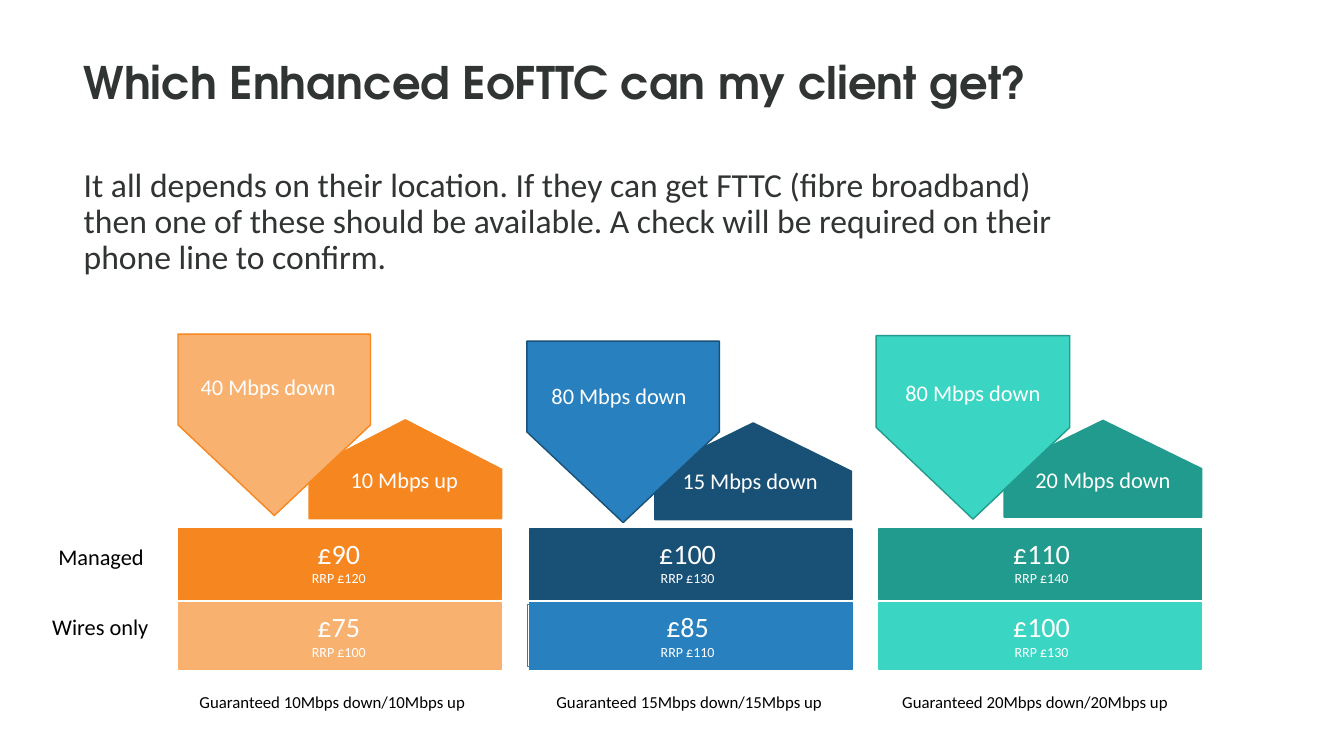
"""Build the slide that compares the three Enhanced EoFTTC offers."""
from typing import NamedTuple

from lxml import etree
from pptx import Presentation
from pptx import util as u
from pptx.dml.color import RGBColor
from pptx.enum import shapes, text
from pptx.oxml import ns

PX = 9144
INK = RGBColor(0x30, 0x34, 0x32)
BLACK = RGBColor(0, 0, 0)
WHITE = RGBColor(0xFF, 0xFF, 0xFF)
ORANGE, PEACH = RGBColor(0xF6, 0x86, 0x1F), RGBColor(0xF9, 0xB1, 0x6F)
NAVY, BLUE = RGBColor(0x19, 0x51, 0x76), RGBColor(0x28, 0x81, 0xBE)
TEAL, AQUA = RGBColor(0x20, 0x9B, 0x8D), RGBColor(0x3A, 0xD6, 0xC3)

BAR_WIDTH, PRICE_WIDTH, PRICE_HEIGHT = 320, 318, 61
LABEL_WIDTH, LABEL_HEIGHT = 306, 37


class Offer(NamedTuple):
    """Wording, colours and places of one column."""
    dark: RGBColor
    light: RGBColor
    left: int
    price_left: int
    up_plate: tuple
    down_plate: tuple
    up_text: str
    up_label: tuple
    down_text: str
    down_label: tuple
    managed: tuple
    wires: tuple
    guarantee: str
    guarantee_left: int


OFFERS = [
    Offer(ORANGE, PEACH, 177, 177, (353, 370, 98, 191), (182, 326, 180, 191),
          "10 Mbps up", (248, 458), "40 Mbps down", (113, 365),
          ("£90", "RRP £120"), ("£75", "RRP £100"),
          "Guaranteed 10Mbps down/10Mbps up", 188),
    Offer(NAVY, BLUE, 525, 523, (699, 370, 96, 195), (528, 333, 180, 191),
          "15 Mbps down", (591, 459), "80 Mbps down", (461, 374),
          ("£100", "RRP £130"), ("£85", "RRP £110"),
          "Guaranteed 15Mbps down/15Mbps up", 542),
    Offer(TEAL, AQUA, 872, 874, (1046, 367, 96, 196), (874, 328, 182, 192),
          "20 Mbps down", (941, 458), "80 Mbps down", (812, 371),
          ("£110", "RRP £140"), ("£100", "RRP £130"),
          "Guaranteed 20Mbps down/20Mbps up", 885),
]


def px(*lengths):
    """Turn px lengths into EMU."""
    return [u.Emu(length * PX) for length in lengths]


def style(para, size, colour, font="Calibri", bold=False):
    """Set the font of a whole paragraph."""
    para.font.name = font
    para.font.size = u.Pt(size)
    para.font.bold = bold
    para.font.color.rgb = colour


def add_shape(page, kind, place, fill, line, rotation=0):
    """Add a flat filled shape with a thin outline."""
    shape = page.shapes.add_shape(kind, *px(*place))
    shape.shadow.inherit = False
    shape.rotation = rotation
    shape.fill.solid()
    shape.fill.fore_color.rgb = fill
    shape.line.color.rgb = line
    shape.line.width = u.Pt(1)
    return shape


def add_text(page, place, lines, colour=BLACK, align=text.PP_ALIGN.LEFT):
    """Add a text box with one paragraph for each (words, size) pair."""
    box = page.shapes.add_textbox(*px(*place))
    frame = box.text_frame
    frame.word_wrap = True
    frame.text = "\n".join(words for words, _ in lines)
    for para, (_, size) in zip(frame.paragraphs, lines):
        para.alignment = align
        style(para, size, colour)
    return box


def add_label(page, corner, words):
    """Add a centred white speed label."""
    add_text(page, (*corner, LABEL_WIDTH, LABEL_HEIGHT), [(words, 16)],
             WHITE, text.PP_ALIGN.CENTER)


def add_price(page, left, top, price):
    """Add a centred price with its list price below."""
    return add_text(page, (left, top, PRICE_WIDTH, PRICE_HEIGHT),
                    list(zip(price, (20, 10))), WHITE, text.PP_ALIGN.CENTER)


def fill_placeholder(holder, place, words, anchor, size, font, bold=False):
    """Move a placeholder and give it one plain paragraph."""
    holder.left, holder.top, holder.width, holder.height = px(*place)
    frame = holder.text_frame
    frame.text = words
    frame.word_wrap = True
    frame.auto_size = text.MSO_AUTO_SIZE.NONE
    frame.vertical_anchor = anchor
    para = frame.paragraphs[0]
    props = para._p.get_or_add_pPr()
    props.set("marL", "0")
    props.set("indent", "0")
    etree.SubElement(props, ns.qn("a:buNone"))
    para.alignment = text.PP_ALIGN.LEFT
    para.line_spacing = 0.9
    para.space_before = u.Pt(0)
    style(para, size, INK, font, bold)


def add_offer(page, offer):
    """Add one column: plates, speeds, prices and guarantee."""
    rectangle = shapes.MSO_SHAPE.RECTANGLE
    plate = shapes.MSO_SHAPE.PENTAGON
    add_shape(page, rectangle, (offer.left, 525, BAR_WIDTH, 70),
              offer.dark, offer.dark)
    add_shape(page, rectangle, (offer.left, 598, BAR_WIDTH, 66),
              offer.light, offer.light)
    add_price(page, offer.price_left, 527, offer.managed)
    wires = add_price(page, offer.price_left, 600, offer.wires)
    if offer.light == BLUE:
        wires.line.color.rgb = BLUE
        wires.line.width = u.Pt(0.75)
    add_shape(page, plate, offer.up_plate, offer.dark, offer.dark, 270)
    add_shape(page, plate, offer.down_plate, offer.light, offer.dark, 90)
    add_label(page, offer.up_label, offer.up_text)
    add_label(page, offer.down_label, offer.down_text)
    add_text(page, (offer.guarantee_left, 681, 322, 30),
             [(offer.guarantee, 12)])


def main():
    """Build and save the deck."""
    deck = Presentation()
    deck.slide_width, deck.slide_height = px(1333, 750)
    page = deck.slides.add_slide(deck.slide_layouts[1])
    fill_placeholder(page.shapes.title, (73, 39, 1150, 74),
                     "Which Enhanced EoFTTC can my client get?",
                     text.MSO_ANCHOR.BOTTOM, 32, "TeX Gyre Adventor", True)
    fill_placeholder(page.placeholders[1], (73, 162, 1003, 121),
                     "It all depends on their location. If they can get FTTC "
                     "(fibre broadband) then one of these should be available. "
                     "A check will be required on their phone line to confirm.",
                     text.MSO_ANCHOR.TOP, 24, "Calibri")
    for left, top, words in ((48, 534, "Managed"), (42, 603, "Wires only")):
        add_text(page, (left, top, 130, LABEL_HEIGHT), [(words, 16)])
    for offer in OFFERS:
        add_offer(page, offer)
    deck.save("out.pptx")


if __name__ == "__main__":
    main()
